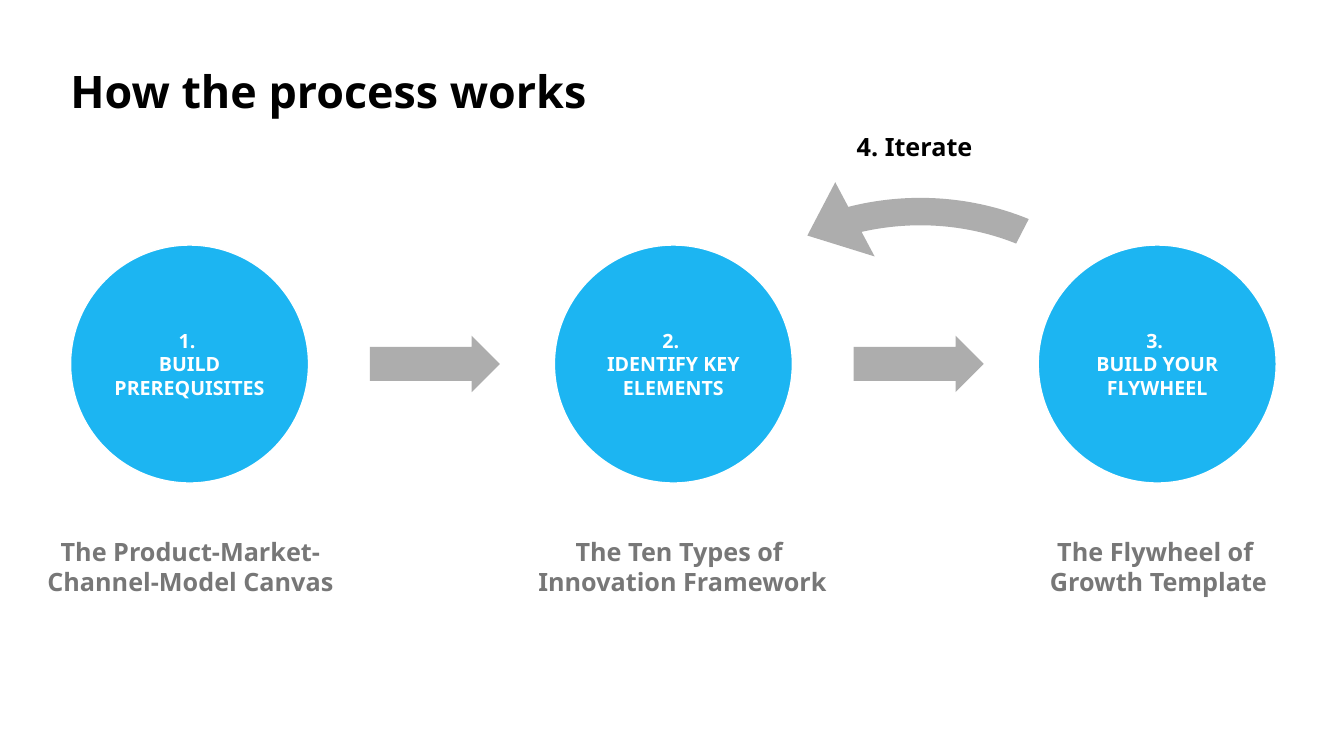
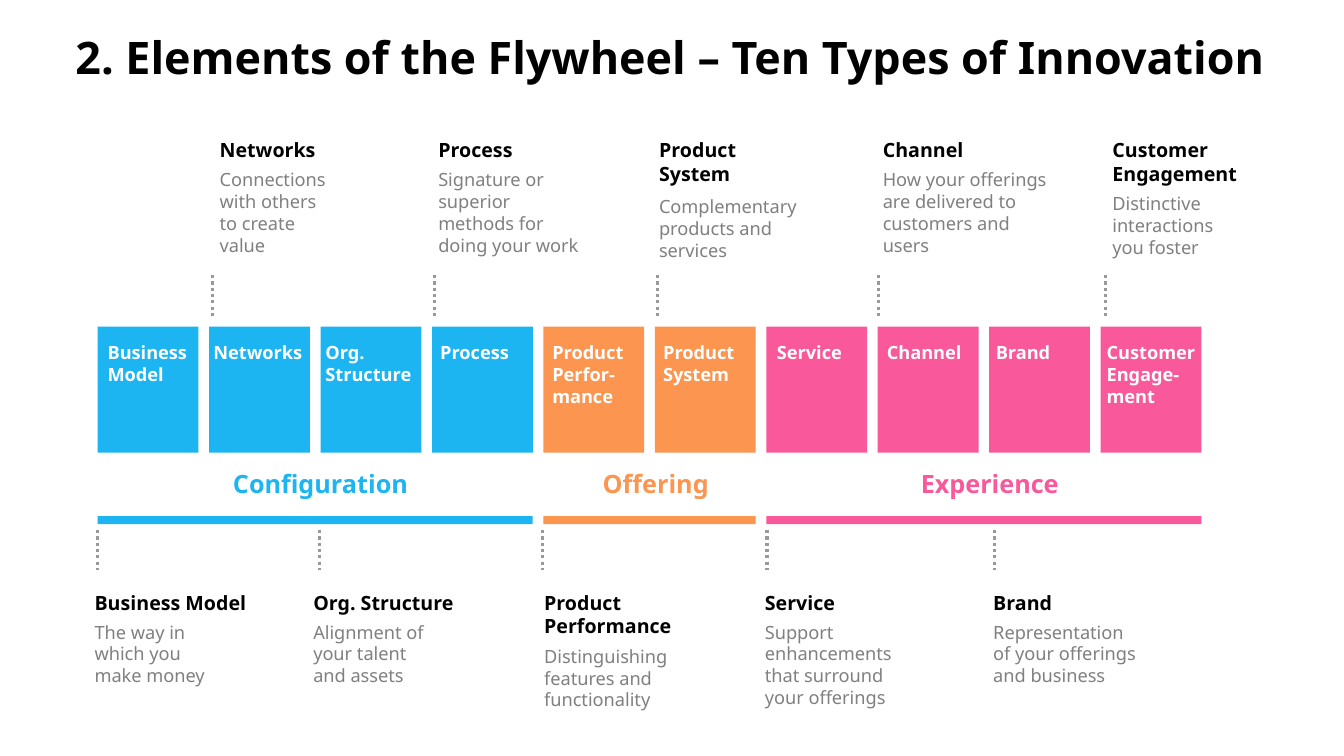
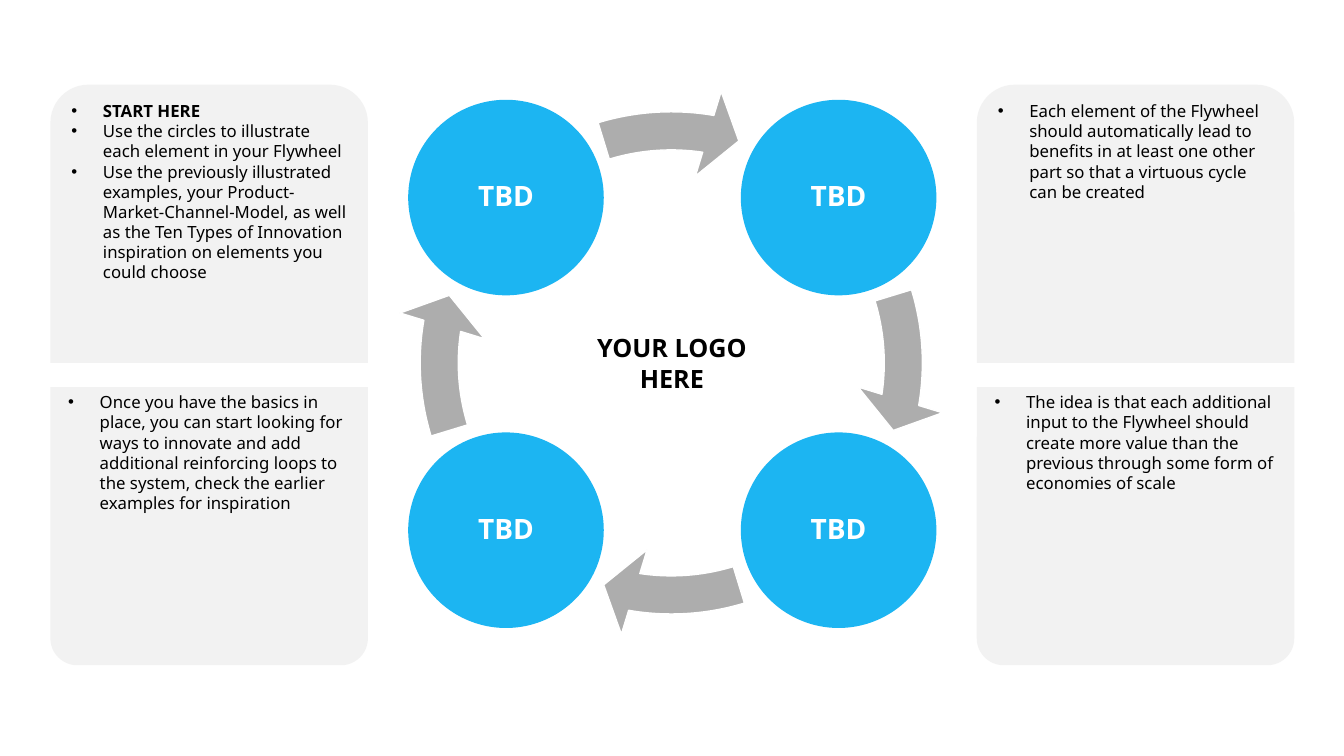
"""Build three slides that explain the flywheel process."""
from lxml import etree
from pptx import Presentation
from pptx.dml.color import RGBColor
from pptx.enum.dml import MSO_LINE
from pptx.enum.shapes import MSO_CONNECTOR, MSO_SHAPE
from pptx.enum.text import MSO_ANCHOR, PP_ALIGN
from pptx.oxml.ns import qn
from pptx.util import Pt

OVAL = MSO_SHAPE.OVAL
RECTANGLE = MSO_SHAPE.RECTANGLE
RIGHT_ARROW = MSO_SHAPE.RIGHT_ARROW
CIRCULAR_ARROW = MSO_SHAPE.CIRCULAR_ARROW
PANEL = MSO_SHAPE.ROUND_2_SAME_RECTANGLE
STRAIGHT = MSO_CONNECTOR.STRAIGHT
DOTTED = MSO_LINE.ROUND_DOT
TOP, MIDDLE = MSO_ANCHOR.TOP, MSO_ANCHOR.MIDDLE
LEFT, CENTER = PP_ALIGN.LEFT, PP_ALIGN.CENTER

FONT = "Noto Sans"
BLACK = RGBColor(0x00, 0x00, 0x00)
WHITE = RGBColor(0xFF, 0xFF, 0xFF)
BLUE = RGBColor(0x1C, 0xB5, 0xF2)
ORANGE = RGBColor(0xFC, 0x95, 0x4F)
PINK = RGBColor(0xF9, 0x59, 0x9A)
ARROW_GRAY = RGBColor(0xAD, 0xAD, 0xAD)
CAPTION_GRAY = RGBColor(0x77, 0x77, 0x77)
BODY_GRAY = RGBColor(0x80, 0x80, 0x80)
DOT_GRAY = RGBColor(0x99, 0x99, 0x99)
PANEL_GRAY = RGBColor(0xF2, 0xF2, 0xF2)


def write(shape, text, size, color, bold=True, align=LEFT, anchor=TOP, spacing=None):
    """Fill a shape or text box with formatted text."""
    frame = shape.text_frame
    frame.word_wrap = True
    frame.vertical_anchor = anchor
    frame.text = text
    for paragraph in frame.paragraphs:
        paragraph.alignment = align
        paragraph.line_spacing = spacing
        for run in paragraph.runs:
            run.font.name = FONT
            run.font.size = Pt(size)
            run.font.bold = bold
            run.font.color.rgb = color


def add_filled(slide, kind, left, top, width, height, fill, adjustments=(), outlined=False):
    """Add a flat preset shape, with a thin white outline if asked."""
    shape = slide.shapes.add_shape(kind, Pt(left), Pt(top), Pt(width), Pt(height))
    shape.shadow.inherit = False
    shape.fill.solid()
    shape.fill.fore_color.rgb = fill
    if outlined:
        shape.line.color.rgb = WHITE
        shape.line.width = Pt(1)
    else:
        shape.line.fill.background()
    for index, value in enumerate(adjustments):
        shape.adjustments[index] = value
    return shape


presentation = Presentation()
presentation.slide_width = Pt(960)
presentation.slide_height = Pt(540)
blank = presentation.slide_layouts[6]
process, elements, flywheel = [presentation.slides.add_slide(blank) for _ in range(3)]

TITLES = [
    (process, "How the process works", 43.2, 15.1, 104.4),
    (elements, "2. Elements of the Flywheel – Ten Types of Innovation", 46.8, 0, 86.4),
]
for slide, title, left, top, height in TITLES:
    box = slide.shapes.add_textbox(Pt(left), Pt(top), Pt(873.4), Pt(height))
    write(box, title, 32, BLACK, anchor=MIDDLE, spacing=0.9)

STEPS = [
    ("1. \vBUILD PREREQUISITES", "The Product-Market-\vChannel-Model Canvas", 136),
    ("2. \vIDENTIFY KEY ELEMENTS", "The Ten Types of \vInnovation Framework", 487.5),
    ("3. \vBUILD YOUR FLYWHEEL", "The Flywheel of \vGrowth Template", 827.5),
]
STEP_PITCH = 345.6
CAPTION_WIDTH = 260
for index, (step, caption, caption_center) in enumerate(STEPS):
    offset = index * STEP_PITCH
    circle = add_filled(process, OVAL, 50.4 + offset, 175, 170, 170, BLUE, outlined=True)
    frame = circle.text_frame
    frame.margin_left = frame.margin_right = frame.margin_top = frame.margin_bottom = Pt(4.3)
    write(circle, step, 14, WHITE, align=CENTER, anchor=MIDDLE)
    if index < len(STEPS) - 1:
        add_filled(process, RIGHT_ARROW, 264.2 + offset, 239.8, 92.9, 40.3, ARROW_GRAY, (0.6, 0.5))
    box = process.shapes.add_textbox(
        Pt(caption_center - CAPTION_WIDTH / 2), Pt(379.4), Pt(CAPTION_WIDTH), Pt(51))
    write(box, caption, 18, CAPTION_GRAY, align=CENTER)

iterate_arrow = add_filled(process, CIRCULAR_ARROW, 461.5, 103.7, 384.5, 419.8, ARROW_GRAY,
                           (0.051, 7.553, 5.851, 196.256, 0.078))
iterate_arrow.rotation = 264.4
iterate_arrow._element.spPr.xfrm.set("flipV", "1")
box = process.shapes.add_textbox(Pt(604.8), Pt(90), Pt(115), Pt(29))
write(box, "4. Iterate", 18, BLACK)

TILE_LEFT, TILE_PITCH, TILE_WIDTH = 69.8, 79.6, 72
CATEGORIES = [
    ("Configuration", BLUE, 0, 4, 229),
    ("Offering", ORANGE, 4, 2, 468.4),
    ("Experience", PINK, 6, 4, 707),
]
for name, color, first, count, name_center in CATEGORIES:
    for index in range(first, first + count):
        add_filled(elements, RECTANGLE, TILE_LEFT + index * TILE_PITCH, 233.3, TILE_WIDTH, 90, color)
    add_filled(elements, RECTANGLE, TILE_LEFT + first * TILE_PITCH, 368.6,
               (count - 1) * TILE_PITCH + TILE_WIDTH, 5.8, color)
    box = elements.shapes.add_textbox(Pt(name_center - 80), Pt(331.2), Pt(160), Pt(29))
    write(box, name, 18, color, align=CENTER)

INNOVATIONS = [
    ("Business\nModel", 69.8, "Business Model", 60.5, 69.8,
     "The way in\nwhich you\nmake money", 21.6, 113),
    ("Networks", 145.4, "Networks", 149.8, 151.9,
     "Connections with others to create value", 21.6, 97.2),
    ("Org.\vStructure", 225.4, "Org. Structure", 216.7, 228.2,
     "Alignment of your talent\nand assets", 21.6, 113),
    ("Process", 307.4, "Process", 306, 310.3,
     "Signature or superior methods for doing your work", 21.6, 120.2),
    ("Product\nPerfor-mance", 387.4, "Product Performance", 381.6, 387.4,
     "Distinguishing features and\nfunctionality", 38.9, 113),
    ("Product\nSystem", 466.6, "Product System", 463.7, 469.4,
     "Complementary products and services", 41, 120.2),
    ("Service", 547.9, "Service", 539.3, 547.9,
     "Support enhancements that surround your offerings", 21.6, 113),
    ("Channel", 626.4, "Channel", 623.5, 627.8,
     "How your offerings are delivered to customers and users", 21.6, 136.8),
    ("Brand", 704.2, "Brand", 702.4, 710.6,
     "Representation of your offerings and business", 21.6, 120.2),
    ("Customer\nEngage-\nment", 783.4, "Customer\nEngagement", 787.5, 789.8,
     "Distinctive interactions you foster", 38.9, 103.7),
]
for index, (label, label_left, heading, left, line_left, body, body_drop, body_width) in enumerate(INNOVATIONS):
    above = index % 2 == 1
    heading_top, heading_width, line_top = (95, 111.6, 196.6) if above else (418.3, 125.3, 378.7)

    box = elements.shapes.add_textbox(Pt(label_left), Pt(240.5), Pt(83), Pt(54))
    write(box, label, 13, WHITE)
    box = elements.shapes.add_textbox(Pt(left), Pt(heading_top), Pt(heading_width), Pt(24.5))
    write(box, heading, 14, BLACK)
    box = elements.shapes.add_textbox(Pt(left), Pt(heading_top + body_drop), Pt(body_width), Pt(70))
    write(box, body, 13, BODY_GRAY, bold=False)

    connector = elements.shapes.add_connector(
        STRAIGHT, Pt(line_left), Pt(line_top), Pt(line_left), Pt(line_top + 28.8))
    connector.line.color.rgb = DOT_GRAY
    connector.line.width = Pt(2.25)
    connector.line.dash_style = DOTTED
    etree.SubElement(connector._element.spPr, qn("a:effectLst"))

QUARTER_TURN = 54
FULL_TURN = 4 * QUARTER_TURN
CIRCLES = [(529.2, 71.3), (529.2, 308.9), (291.6, 308.9), (291.6, 71.3)]
for index, (left, top) in enumerate(CIRCLES):
    circle = add_filled(flywheel, OVAL, left, top, 139.7, 139.7, BLUE)
    write(circle, "TBD", 20, WHITE, align=CENTER, anchor=MIDDLE, spacing=0.9)
    turn = index * QUARTER_TURN
    add_filled(flywheel, CIRCULAR_ARROW, 282.2, 61.9, 394.6, 394.6, ARROW_GRAY,
               (0.069, 4.65, 5.508 + turn, (205.841 + turn) % FULL_TURN, 0.08), outlined=True)

box = flywheel.shapes.add_textbox(Pt(400), Pt(234), Pt(160), Pt(51))
write(box, "YOUR LOGO\vHERE", 18, BLACK, align=CENTER)

UPPER, LOWER = (60.5, (0.137, 0)), (276.5, (0, 0.097))
PANELS = [
    (36, UPPER, "START HERE\n"
     "Use the circles to illustrate each element in your Flywheel\n"
     "Use the previously illustrated examples, your Product-Market-Channel-Model, "
     "as well as the Ten Types of Innovation inspiration on elements you could choose"),
    (36, LOWER, "Once you have the basics in place, you can start looking for ways to innovate "
     "and add additional reinforcing loops to the system, check the earlier examples for inspiration"),
    (697.7, UPPER, "Each element of the Flywheel should automatically lead to benefits "
     "in at least one other part so that a virtuous cycle can be created"),
    (697.7, LOWER, "The idea is that each additional input to the Flywheel should create more value "
     "than the previous through some form of economies of scale"),
]
for left, (top, corners), text in PANELS:
    panel = add_filled(flywheel, PANEL, left, top, 226.8, 198.7, PANEL_GRAY, corners)
    write(panel, text, 12, BLACK, bold=False)
    for paragraph in panel.text_frame.paragraphs:
        properties = paragraph._p.get_or_add_pPr()
        properties.set("marL", str(Pt(22.5)))
        properties.set("indent", str(-Pt(22.5)))
        etree.SubElement(properties, qn("a:buFont"), typeface="Arial")
        etree.SubElement(properties, qn("a:buChar"), char="•")
        if paragraph.text == "START HERE":
            paragraph.runs[0].font.bold = True

presentation.save("out.pptx")
